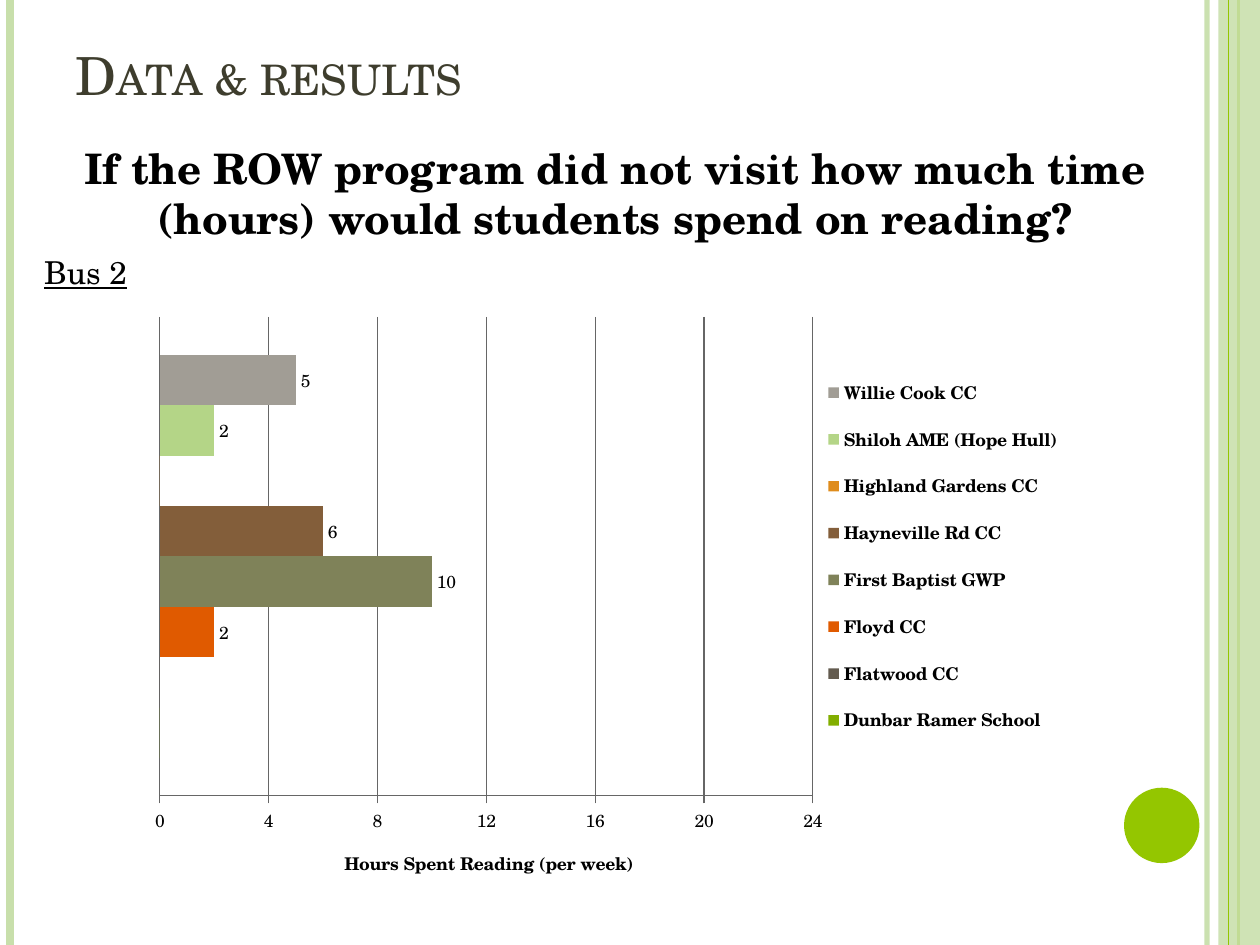
import pptx
import pptx.util
import pptx.chart.data
import pptx.dml.color
import pptx.enum.chart
import pptx.enum.shapes
import pptx.enum.text
import pptx.oxml
from pptx.oxml.ns import qn

Cm, Pt = pptx.util.Cm, pptx.util.Pt
Kind = pptx.enum.shapes.MSO_SHAPE
Align = pptx.enum.text.PP_ALIGN
Anchor = pptx.enum.text.MSO_ANCHOR
Enum = pptx.enum.chart

HUES = {
    "pale": "C8DFAB", "lime": "94C600", "title": "3E3D2D", "text": "000000",
    "grid": "666666",
}
# Series name, hours, colour
SITES = [
    ("Dunbar Ramer School", 0, "82AE00"),
    ("Flatwood CC", 0, "635B4F"),
    ("Floyd CC", 2, "E05A00"),
    ("First Baptist GWP", 10, "7F8259"),
    ("Hayneville Rd CC", 6, "835E3A"),
    ("Highland Gardens CC", 0, "DF8C1C"),
    ("Shiloh AME (Hope Hull)", 2, "B4D587"),
    ("Willie Cook CC", 5, "A19D95"),
]


def rgb(hue):
    return pptx.dml.color.RGBColor.from_string(HUES.get(hue, hue))


def put(item, **vals):
    for key, val in vals.items():
        setattr(item, key, val)


def fade(fill, pct):
    node = fill._xPr.find(".//" + qn("a:srgbClr"))
    node.append(node.makeelement(qn("a:alpha"), {"val": str(pct * 1000)}))


def place(item, left, top, wide, high):
    """Manual layout of a chart part, as fractions of the chart."""
    old = item.find(qn("c:layout"))
    if old is not None:
        item.remove(old)
    node = item.makeelement(qn("c:layout"), {})
    box = node.makeelement(qn("c:manualLayout"), {})
    node.append(box)
    rows = [("xMode", "edge"), ("yMode", "edge"),
            ("x", left), ("y", top), ("w", wide), ("h", high)]
    if item.tag == qn("c:plotArea"):
        rows.insert(0, ("layoutTarget", "inner"))
        item.insert(0, node)
    else:
        item.find(qn("c:legendPos")).addnext(node)
    for tag, val in rows:
        box.append(box.makeelement(qn("c:" + tag), {"val": str(val)}))


class Deck:
    face = "TeX Gyre Schola"

    def __init__(self, wide, high):
        self.show = pptx.Presentation()
        put(self.show, slide_width=Cm(wide), slide_height=Cm(high))
        self.high = high
        self.slide = self.show.slides.add_slide(self.show.slide_layouts[5])

    def font(self, font, size, hue="text", **more):
        put(font, name=self.face, size=Pt(size), **more)
        font.color.rgb = rgb(hue)

    def rule(self, x, hue, width, pct=100):
        line = self.slide.shapes.add_connector(
            pptx.enum.shapes.MSO_CONNECTOR.STRAIGHT, Cm(x), 0, Cm(x), Cm(self.high))
        line.line.width = Pt(width)
        line.line.color.rgb = rgb(hue)
        if pct < 100:
            fade(line.line.fill, pct)
        props = line._element.spPr
        props.append(props.makeelement(qn("a:effectLst"), {}))

    def shape(self, kind, box, hue, pct=100):
        item = self.slide.shapes.add_shape(kind, *map(Cm, box))
        item.shadow.inherit = False
        item.fill.solid()
        item.fill.fore_color.rgb = rgb(hue)
        item.line.fill.background()
        if pct < 100:
            fade(item.fill, pct)

    def title(self, text, box):
        item = self.slide.shapes.title
        put(item, **dict(zip(("left", "top", "width", "height"), map(Cm, box))))
        put(item.text_frame, text=text, vertical_anchor=Anchor.BOTTOM, word_wrap=True)
        par = item.text_frame.paragraphs[0]
        par.alignment = Align.LEFT
        self.font(par.runs[0].font, 30, "title")
        par.runs[0].font._element.set("cap", "small")

    def text(self, box, rows):
        frame = self.slide.shapes.add_textbox(*map(Cm, box)).text_frame
        frame.word_wrap = True
        for num, (text, size, align, style) in enumerate(rows):
            par = frame.add_paragraph() if num else frame.paragraphs[0]
            put(par, alignment=align, space_before=Pt(6))
            run = par.add_run()
            run.text = text
            self.font(run.font, size, **style)

    def bars(self, box, sites, name):
        data = pptx.chart.data.CategoryChartData()
        data.categories = ["1"]
        for site, hours, _ in sites:
            data.add_series(site, [hours])
        chart = self.slide.shapes.add_chart(
            Enum.XL_CHART_TYPE.BAR_CLUSTERED, *map(Cm, box), data).chart
        put(chart, has_title=False, has_legend=True)
        self.font(chart.font, 10)

        # Legend
        put(chart.legend, position=Enum.XL_LEGEND_POSITION.RIGHT,
            include_in_layout=False)
        self.font(chart.legend.font, 10, bold=True)
        place(chart.legend._element, 0.71, 0.09, 0.27, 0.66)

        # Axes
        chart.category_axis.visible = False
        axis = chart.value_axis
        put(axis, minimum_scale=0, maximum_scale=24, major_unit=4,
            has_major_gridlines=True, major_tick_mark=Enum.XL_TICK_MARK.OUTSIDE)
        for part in (axis, axis.major_gridlines):
            part.format.line.width = Pt(0.75)
            part.format.line.color.rgb = rgb("grid")
        axis.axis_title.text_frame.text = name
        run = axis.axis_title.text_frame.paragraphs[0].runs[0]
        self.font(run.font, 10, bold=True)

        # Bars
        plot = chart.plots[0]
        put(plot, gap_width=150, overlap=0, vary_by_categories=False)
        for row, (_, hours, hue) in zip(plot.series, sites):
            row.format.fill.solid()
            row.format.fill.fore_color.rgb = rgb(hue)
            if hours:
                put(row.data_labels, show_value=True,
                    position=Enum.XL_LABEL_POSITION.OUTSIDE_END)
                self.font(row.data_labels.font, 10)
        place(chart._chartSpace.find(".//" + qn("c:plotArea")),
              0.025, 0.02, 0.684, 0.8)


def main():
    deck = Deck(25.4, 19.05)

    # Side bands
    deck.rule(24.33, "pale", 3, 93)
    deck.rule(0.2, "pale", 4.5)
    deck.rule(24.97, "lime", 1.5)
    deck.shape(Kind.RECTANGLE, (24.56, 0, 0.84, 19.05), "pale", 87)
    deck.rule(24.77, "lime", 0.75)
    deck.shape(Kind.OVAL, (22.66, 15.88, 1.52, 1.52), "lime")

    # Title and question
    deck.title("Data & results", (1.27, 0.43, 22.01, 1.83))
    deck.text((0.64, 2.74, 23.5, 13.97), [
        ("If the ROW program did not visit how much time (hours) would "
         "students spend on reading?", 24, Align.CENTER, {"bold": True}),
        ("Bus 2", 18, Align.LEFT, {"underline": True}),
    ])

    # Hours by site
    deck.bars((2.74, 6.15, 19.25, 12.07), SITES, "Hours Spent Reading (per week)")
    deck.show.save("out.pptx")


if __name__ == "__main__":
    main()
